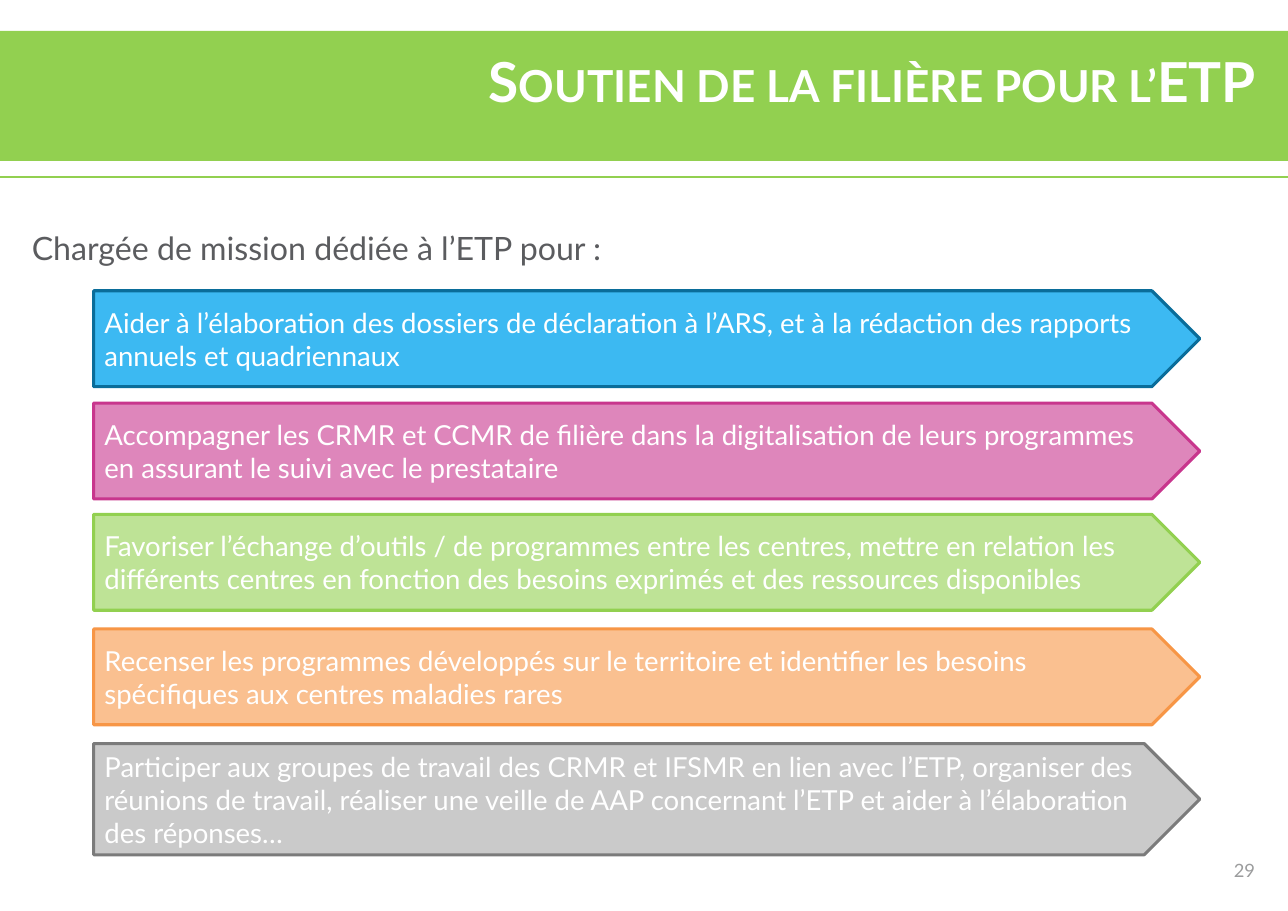
"""Build the slide on the network's support for patient education (ETP)."""
from pptx import Presentation
from pptx.dml.color import RGBColor
from pptx.enum.shapes import MSO_CONNECTOR, MSO_SHAPE
from pptx.enum.text import MSO_ANCHOR, MSO_AUTO_SIZE, PP_ALIGN
from pptx.oxml.ns import qn
from pptx.util import Inches, Pt

WHITE = RGBColor(0xFF, 0xFF, 0xFF)
GREEN = RGBColor(0x92, 0xD0, 0x50)
TEXT_GREY = RGBColor(0x5B, 0x5C, 0x5F)
NUMBER_GREY = RGBColor(0x9B, 0x9C, 0x9D)
BLUE, DARK_BLUE = RGBColor(0x3C, 0xB9, 0xF2), RGBColor(0x0A, 0x6D, 0x9A)
PINK, DARK_PINK = RGBColor(0xDE, 0x86, 0xBB), RGBColor(0xC8, 0x36, 0x8D)
LIGHT_GREEN = RGBColor(0xBE, 0xE3, 0x96)
PEACH, ORANGE = RGBColor(0xFA, 0xC0, 0x90), RGBColor(0xF7, 0x96, 0x46)
SILVER, DARK_GREY = RGBColor(0xCA, 0xCA, 0xCA), RGBColor(0x7B, 0x7B, 0x7B)

MISSIONS = [
    (2.64, 0.87, BLUE, DARK_BLUE,
     "Aider à l’élaboration des dossiers de déclaration à l’ARS, et à la "
     "rédaction des rapports annuels et quadriennaux"),
    (3.66, 0.87, PINK, DARK_PINK,
     "Accompagner les CRMR et CCMR de filière dans la digitalisation de leurs "
     "programmes en assurant le suivi avec le prestataire"),
    (4.67, 0.87, LIGHT_GREEN, GREEN,
     "Favoriser l’échange d’outils / de programmes entre les centres, mettre en "
     "relation les différents centres en fonction des besoins exprimés et des "
     "ressources disponibles"),
    (5.71, 0.87, PEACH, ORANGE,
     "Recenser les programmes développés sur le territoire et identifier les "
     "besoins spécifiques aux centres maladies rares"),
    (6.75, 1.01, SILVER, DARK_GREY,
     "Participer aux groupes de travail des CRMR et IFSMR en lien avec l’ETP, "
     "organiser des réunions de travail, réaliser une veille de AAP concernant "
     "l’ETP et aider à l’élaboration des réponses…"),
]


def write(shape, text, size, color, align=PP_ALIGN.LEFT, anchor=MSO_ANCHOR.TOP):
    frame = shape.text_frame
    frame.word_wrap = True
    frame.auto_size = MSO_AUTO_SIZE.NONE
    frame.vertical_anchor = anchor
    para = frame.paragraphs[0]
    para.text = text
    para.alignment = align
    para.font.name = "Lato"
    para.font.size = Pt(size)
    para.font.color.rgb = color
    return para


deck = Presentation()
deck.slide_width, deck.slide_height = Inches(11.69), Inches(8.27)
page = deck.slides.add_slide(deck.slide_layouts[5])
shapes = page.shapes

band = shapes.add_shape(MSO_SHAPE.RECTANGLE, 0, Inches(0.28), deck.slide_width, Inches(1.18))
band.shadow.inherit = False
band.fill.solid()
band.fill.fore_color.rgb = GREEN
band.line.fill.background()

rule = shapes.add_connector(MSO_CONNECTOR.STRAIGHT, 0, Inches(1.61), deck.slide_width, Inches(1.61))
rule.line.color.rgb = GREEN
rule.line.width = Pt(1.5)
properties = rule._element.spPr
properties.append(properties.makeelement(qn("a:effectLst"), {}))

title = shapes.title
title.left, title.top = Inches(0.19), Inches(0.38)
title.width, title.height = Inches(11.31), Inches(1)
heading = write(title, "Soutien de la filière pour l’ETP", 36, WHITE, PP_ALIGN.RIGHT)
heading.font.bold = True
heading.font._element.set("cap", "small")
shapes._spTree.append(title._element)

number = shapes.add_textbox(Inches(10.89), Inches(7.68), Inches(0.6), Inches(0.44))
write(number, "29", 12, NUMBER_GREY, PP_ALIGN.RIGHT, MSO_ANCHOR.MIDDLE)

intro = shapes.add_textbox(Inches(0.19), Inches(2.02), Inches(10.84), Inches(0.45))
write(intro, "Chargée de mission dédiée à l’ETP pour :", 21, TEXT_GREY)

for top, height, fill, border, mission in MISSIONS:
    arrow = shapes.add_shape(MSO_SHAPE.PENTAGON, Inches(0.85), Inches(top), Inches(10.04), Inches(height))
    arrow.shadow.inherit = False
    arrow.fill.solid()
    arrow.fill.fore_color.rgb = fill
    arrow.line.color.rgb = border
    arrow.line.width = Pt(2)
    write(arrow, mission, 18, WHITE, anchor=MSO_ANCHOR.MIDDLE)

deck.save("out.pptx")
